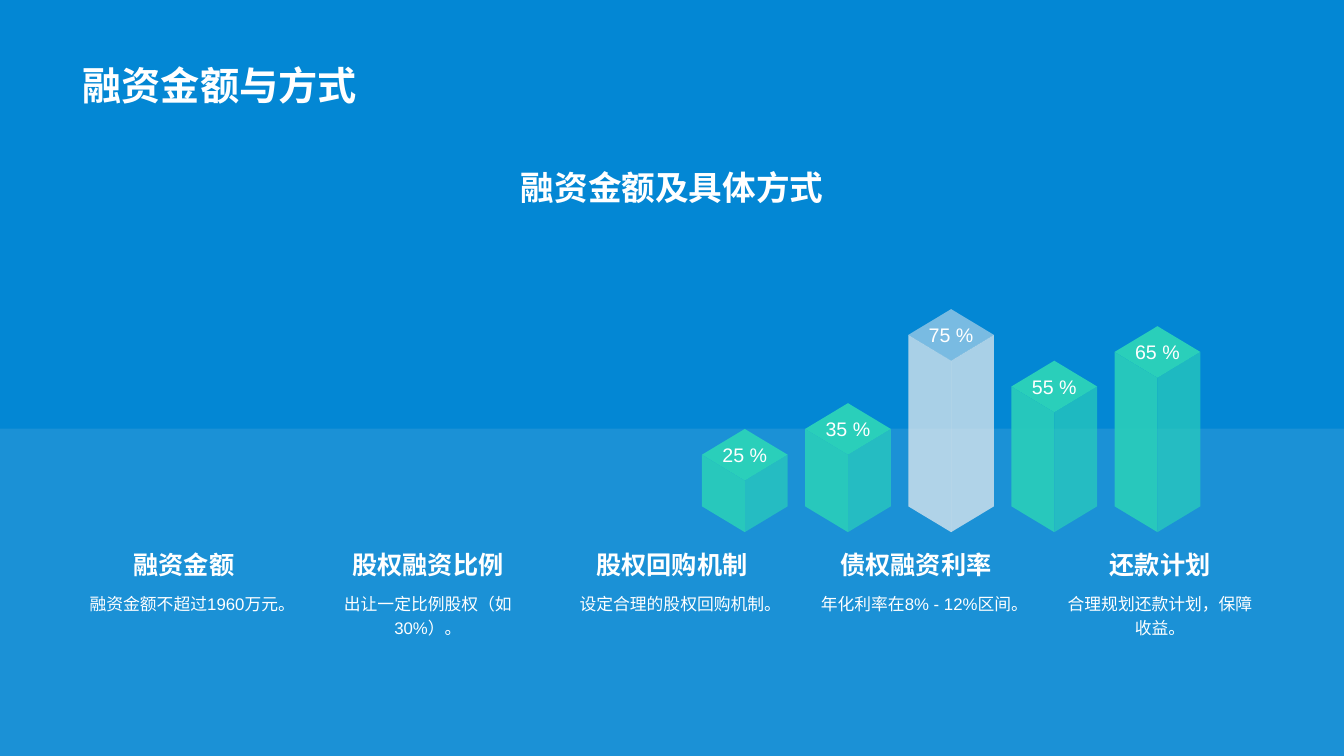
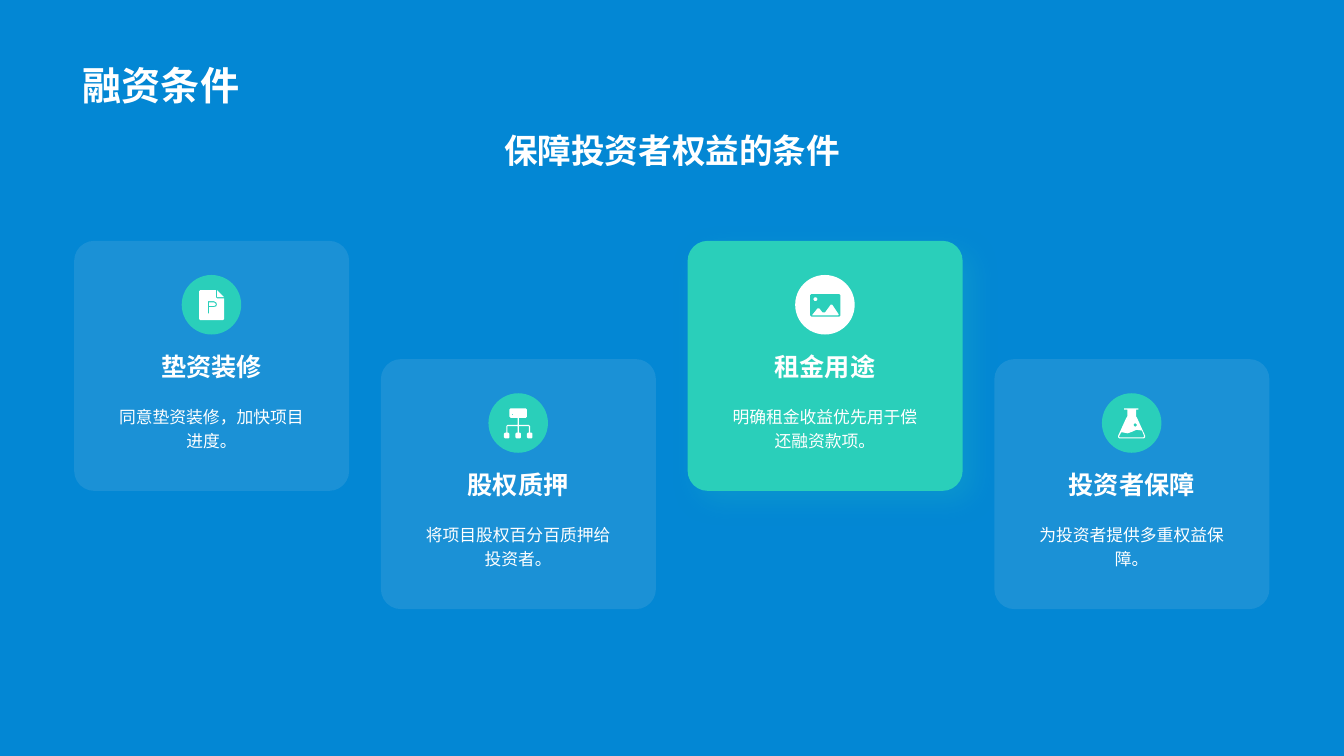
import math
from dataclasses import dataclass
from lxml import etree
from pptx import Presentation
from pptx import util as u
from pptx.dml import color
from pptx.enum import shapes, text
from pptx.oxml import ns

HUES = {"sky": "0387D4", "mint": "2ACFBA", "pale": "F0F0F0", "white": "FFFFFF"}
FONT = "Arial"
MID = text.PP_ALIGN.CENTER
TOP, LOW = text.MSO_ANCHOR.TOP, text.MSO_ANCHOR.BOTTOM
Dots = list[tuple[float, float]]


@dataclass
class Bar:
    share: str
    tall: float
    hot: bool = False


@dataclass
class Note:
    head: str
    body: str


@dataclass
class Card:
    note: Note
    icon: list[Dots]
    hot: bool = False


def rgb(hue: str) -> color.RGBColor:
    return color.RGBColor.from_string(HUES[hue])


def paint(shape, hue: str, alpha: int = 100) -> None:
    shape.shadow.inherit = False
    shape.fill.solid()
    shape.fill.fore_color.rgb = rgb(hue)
    shape.line.fill.background()
    if alpha < 100:
        tone = shape.element.spPr.find(".//" + ns.qn("a:srgbClr"))
        etree.SubElement(tone, ns.qn("a:alpha"), val=str(alpha * 1000))


def glow(shape, hue: str) -> None:
    box = shape.element.spPr.find(ns.qn("a:effectLst"))
    cast = etree.SubElement(box, ns.qn("a:outerShdw"), blurRad=str(u.Pt(20)),
                            dist=str(u.Pt(10)), dir="2700000", algn="tl", rotWithShape="0")
    tone = etree.SubElement(cast, ns.qn("a:srgbClr"), val=HUES[hue])
    etree.SubElement(tone, ns.qn("a:alpha"), val="20000")


def write(shape, words: str, size: int, bold: bool = False, align=MID,
          anchor=TOP, pad: float | None = None, lead: float | None = None) -> None:
    frame = shape.text_frame
    frame.auto_size = text.MSO_AUTO_SIZE.NONE
    frame.word_wrap = True
    frame.vertical_anchor = anchor
    if pad is not None:
        frame.margin_left = frame.margin_right = u.Cm(pad)
        frame.margin_top = frame.margin_bottom = u.Cm(pad)
    para = frame.paragraphs[0]
    para.alignment = align
    if lead:
        para.line_spacing = lead
    run = para.add_run()
    run.text = words
    run.font.name = FONT
    run.font.size = u.Pt(size)
    run.font.bold = bold
    run.font.color.rgb = rgb("white")


def label(slide, x: float, y: float, w: float, h: float, words: str, size: int, **style) -> None:
    box = slide.shapes.add_textbox(u.Cm(x), u.Cm(y), u.Cm(w), u.Cm(h))
    write(box, words, size, **style)


def block(slide, kind, x: float, y: float, w: float, h: float, hue: str, alpha: int = 100):
    shape = slide.shapes.add_shape(kind, u.Cm(x), u.Cm(y), u.Cm(w), u.Cm(h))
    paint(shape, hue, alpha)
    return shape


def outline(slide, loops: list[Dots], hue: str, alpha: int = 100):
    pen = None
    for loop in loops:
        first, *rest = [(u.Cm(x), u.Cm(y)) for x, y in loop]
        if pen is None:
            pen = slide.shapes.build_freeform(*first)
        else:
            pen.move_to(*first)
        pen.add_line_segments(rest, close=True)
    shape = pen.convert_to_shape()
    paint(shape, hue, alpha)
    return shape


def start(deck, title: str, lead: str, y: float):
    slide = deck.slides.add_slide(deck.slide_layouts[5])
    head = slide.shapes.title
    head.left, head.top, head.width, head.height = map(u.Cm, (1.83, 0.36, 30.18, 2.49))
    write(head, title, 28, bold=True, align=text.PP_ALIGN.LEFT, anchor=LOW)
    label(slide, 1.88, y, 30.12, 2.7, lead, 24, bold=True)
    return slide


def chip(l: float, t: float, r: float, b: float, cut: float = 0.3) -> Dots:
    return [(l + cut, t), (r - cut, t), (r, t + cut), (r, b - cut),
            (r - cut, b), (l + cut, b), (l, b - cut), (l, t + cut)]


def disc(x: float, y: float, r: float) -> Dots:
    turns = [math.tau * k / 16 for k in range(16)]
    return [(x + r * math.cos(a), y + r * math.sin(a)) for a in turns]


PAPER = [
    [(4.7, 3.8), (8.6, 3.8), (8.6, 5.6), (8.9, 5.9), (10.7, 5.9), (10.7, 11.1),
     (10.4, 11.4), (4.7, 11.4), (4.4, 11.1), (4.4, 4.1)],
    [(8.9, 3.8), (10.7, 5.6), (8.9, 5.6)],
    [(6.6, 6.6), (8.1, 6.6), (8.7, 6.9), (8.9, 7.4), (8.7, 7.9), (8.1, 8.1),
     (6.9, 8.1), (6.9, 9.7), (6.6, 9.7)],
    [(6.9, 6.9), (8.1, 6.9), (8.4, 7.1), (8.6, 7.4), (8.4, 7.7), (8.1, 7.8), (6.9, 7.8)],
]
TREE = [
    chip(5.3, 3.8, 9.7, 6.2),
    disc(6.1, 5.4, 0.15),
    [(7.35, 6.2), (7.65, 6.2), (7.65, 8), (10.2, 8), (10.5, 8.3), (10.5, 9.9),
     (10.2, 9.9), (10.2, 8.3), (7.65, 8.3), (7.65, 9.9), (7.35, 9.9), (7.35, 8.3),
     (4.8, 8.3), (4.8, 9.9), (4.5, 9.9), (4.5, 8.3), (4.8, 8), (7.35, 8)],
    *[chip(x, 9.9, x + 1.4, 11.4) for x in (3.9, 6.8, 9.7)],
]
PHOTO = [
    chip(3.8, 4.8, 11.4, 10.5),
    disc(5.1, 6.1, 0.5),
    [(4.3, 10.2), (4.3, 10), (5.6, 8.4), (6.1, 8.4), (6.9, 9.4), (7.5, 9.4),
     (8.9, 7.5), (9.4, 7.5), (11, 9.9), (10.9, 10.2)],
]
FLASK = [
    [(5.6, 3.8), (9.2, 3.8), (9.2, 4.1), (8.6, 4.1), (8.6, 5.8), (8.9, 6.3),
     (10.9, 10.7), (10.9, 11.1), (10.6, 11.4), (4.4, 11.4), (4.1, 11.1), (4.1, 10.7),
     (6.1, 6.3), (6.4, 5.8), (6.4, 4.1), (5.6, 4.1)],
    [(7.6, 9.7), (6.5, 10.1), (4.9, 9.8), (4.4, 10.7), (4.3, 11), (4.5, 11.1),
     (10.4, 11.1), (10.6, 11), (10.6, 10.7), (10.1, 9.4), (8.7, 9.2)],
    disc(8.4, 8, 0.4),
]

BARS = [Bar("25 %", 1.3), Bar("35 %", 1.95), Bar("75 %", 4.32, True),
        Bar("55 %", 3.02), Bar("65 %", 3.89)]
NOTES = [
    Note("融资金额", "融资金额不超过1960万元。"),
    Note("股权融资比例", "出让一定比例股权（如30%）。"),
    Note("股权回购机制", "设定合理的股权回购机制。"),
    Note("债权融资利率", "年化利率在8% - 12%区间。"),
    Note("还款计划", "合理规划还款计划，保障收益。"),
]
CARDS = [
    Card(Note("垫资装修", "同意垫资装修，加快项目进度。"), PAPER),
    Card(Note("股权质押", "将项目股权百分百质押给投资者。"), TREE),
    Card(Note("租金用途", "明确租金收益优先用于偿还融资款项。"), PHOTO, True),
    Card(Note("投资者保障", "为投资者提供多重权益保障。"), FLASK),
]


def pillar(slide, bar: Bar, x: float) -> None:
    half, rise, base = 1.08, 0.65, 12.76
    top, mid, end = base - bar.tall, x + half, x + 2 * half
    hue, left, right, lid = ("pale", 70, 70, 50) if bar.hot else ("mint", 90, 70, 100)
    for side, alpha in ((x, left), (end, right)):
        face = [(side, base), (mid, base + rise), (mid, top + rise), (side, top)]
        outline(slide, [face], hue, alpha)
    cap = [(x, top), (mid, top - rise), (end, top), (mid, top + rise)]
    write(outline(slide, [cap], hue, lid), bar.share, 14, anchor=text.MSO_ANCHOR.MIDDLE)


def panel(slide, card: Card, x: float, y: float) -> None:
    kind = shapes.MSO_SHAPE
    fill, alpha, dot, ink = (("mint", 100, "white", "mint") if card.hot
                             else ("pale", 10, "mint", "white"))
    plate = block(slide, kind.ROUNDED_RECTANGLE, x, y, 6.93, 6.3, fill, alpha)
    plate.adjustments[0] = 0.08
    if card.hot:
        glow(plate, fill)
    label(slide, x + 0.73, y + 2.6, 5.46, 1.19, card.note.head, 18,
          bold=True, anchor=LOW, pad=0.25)
    label(slide, x + 0.73, y + 3.78, 5.46, 2.53, card.note.body, 12, pad=0.3, lead=1.2)
    left, top = x + 2.71, y + 0.86
    block(slide, kind.OVAL, left, top, 1.5, 1.5, dot)
    loops = [[(left + a / 10, top + b / 10) for a, b in loop] for loop in card.icon]
    outline(slide, loops, ink)


def amounts(deck) -> None:
    slide = start(deck, "融资金额与方式", "融资金额及具体方式", 4.09)
    block(slide, shapes.MSO_SHAPE.RECTANGLE, 0, 10.8, 33.87, 8.25, "pale", 10)
    for k, bar in enumerate(BARS):
        pillar(slide, bar, 17.69 + 2.6 * k)
    for k, note in enumerate(NOTES):
        x = 1.88 + 6.15 * k
        label(slide, x, 13.49, 5.51, 1.24, note.head, 18, bold=True, anchor=LOW)
        label(slide, x, 14.73, 5.51, 2.31, note.body, 12, lead=1.2)


def terms(deck) -> None:
    slide = start(deck, "融资条件", "保障投资者权益的条件", 3.14)
    for k, card in enumerate(CARDS):
        panel(slide, card, 1.87 + 7.73 * k, 6.07 + 2.98 * (k % 2))


def main() -> None:
    deck = Presentation()
    deck.slide_width, deck.slide_height = u.Cm(33.87), u.Cm(19.05)
    back = deck.slide_master.background.fill
    back.solid()
    back.fore_color.rgb = rgb("sky")
    amounts(deck)
    terms(deck)
    deck.save("out.pptx")


if __name__ == "__main__":
    main()
